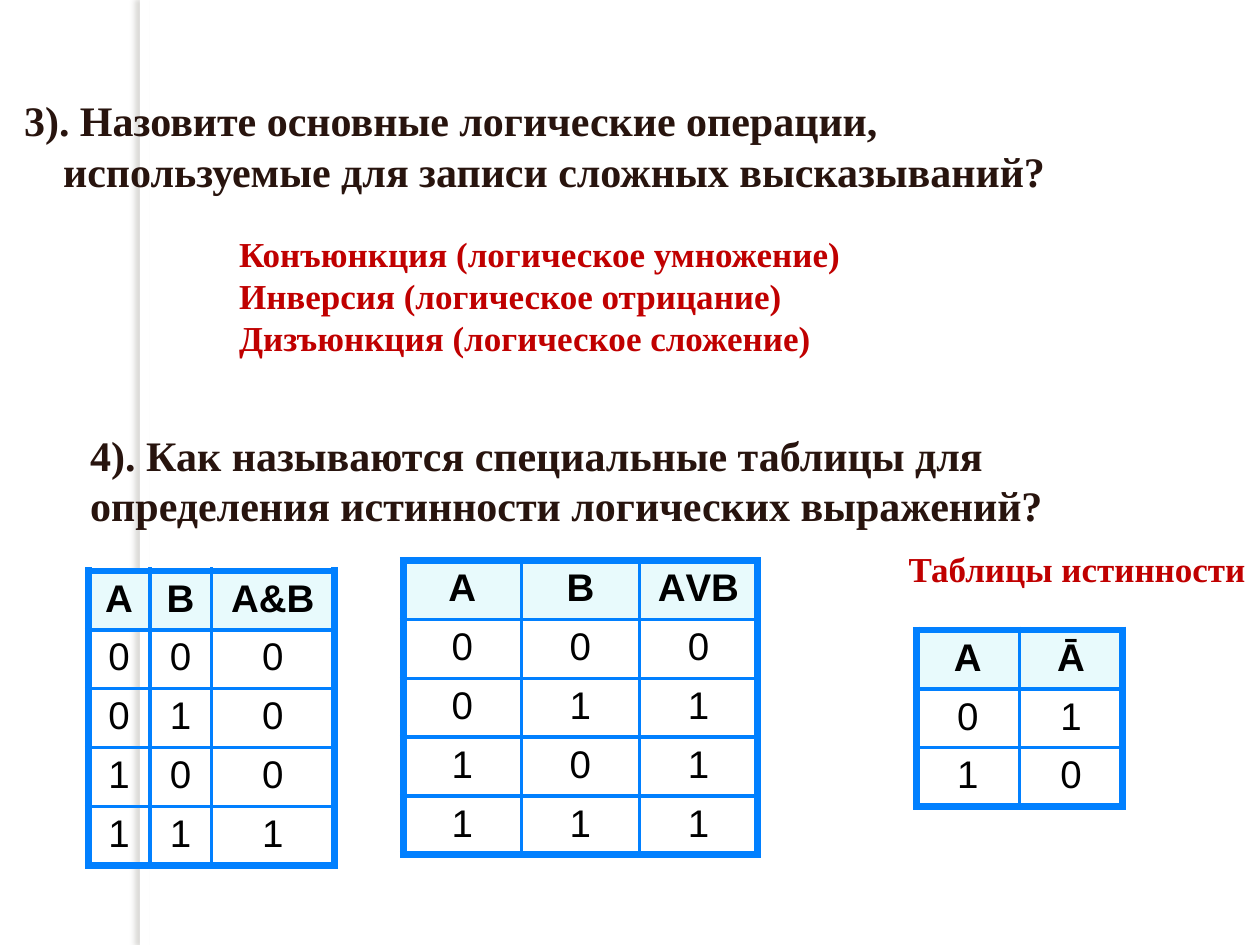
from lxml import etree
from pptx import Presentation
from pptx import util as u
from pptx.dml import color
from pptx.enum import shapes, text
from pptx.oxml import ns

COLORS = {
    "paper": "FFFFFF",
    "question": "28140E",
    "answer": "C00000",
    "grid": "0180FF",
    "header": "E8FAFC",
    "cell": "000000",
    "shadow": "736F63",
}
SERIF, SANS = "Times New Roman", "Arial"
OUTER, INNER = 4.5, 2.25
ROW_HEIGHT = 1.18


def add_xml(parent, tag, **attributes):
    return etree.SubElement(parent, ns.qn(tag), attributes)


class SlideBuilder:
    def __init__(self, slide):
        self.slide = slide

    def rgb(self, name):
        return color.RGBColor.from_string(COLORS[name])

    def format_paragraph(self, paragraph, font, size, tint, bold=True, align=text.PP_ALIGN.LEFT):
        paragraph.alignment = align
        for run in paragraph.runs:
            run.font.name = font
            run.font.size = u.Pt(size)
            run.font.bold = bold
            run.font.color.rgb = self.rgb(tint)

    def stripe(self, left, top, width, height):
        shape = self.slide.shapes.add_shape(
            shapes.MSO_SHAPE.RECTANGLE, u.Cm(left), u.Cm(top), u.Cm(width), u.Cm(height))
        shape.fill.solid()
        shape.fill.fore_color.rgb = self.rgb("paper")
        shape.line.fill.background()
        shape.shadow.inherit = False
        effects = shape.element.spPr.find(ns.qn("a:effectLst"))
        shadow = add_xml(effects, "a:outerShdw", blurRad=str(u.Pt(3)), dist=str(u.Pt(3)),
                         dir="10800000", algn="tl", rotWithShape="0")
        tint = add_xml(shadow, "a:srgbClr", val=COLORS["shadow"])
        add_xml(tint, "a:alpha", val="25000")
        shape.element.getparent().insert(2, shape.element)

    def body(self, wording, left, top, width, height):
        title = self.slide.shapes.title.element
        title.getparent().remove(title)
        shape = self.slide.placeholders[1]
        shape.left, shape.top = u.Cm(left), u.Cm(top)
        shape.width, shape.height = u.Cm(width), u.Cm(height)
        frame = shape.text_frame
        frame.text = wording
        frame.auto_size = text.MSO_AUTO_SIZE.SHAPE_TO_FIT_TEXT
        paragraph = frame.paragraphs[0]
        self.format_paragraph(paragraph, SERIF, 24, "question")
        paragraph.space_before = u.Pt(0)
        properties = paragraph._p.get_or_add_pPr()
        properties.set("marL", str(u.Cm(1.02)))
        properties.set("indent", str(u.Cm(-0.79)))
        add_xml(properties, "a:buNone")

    def text_box(self, lines, left, top, width, height, size, tint, aligns=(), wrap=False):
        shape = self.slide.shapes.add_textbox(u.Cm(left), u.Cm(top), u.Cm(width), u.Cm(height))
        frame = shape.text_frame
        frame.text = "\n".join(lines)
        frame.word_wrap = wrap
        frame.auto_size = text.MSO_AUTO_SIZE.SHAPE_TO_FIT_TEXT
        for index, paragraph in enumerate(frame.paragraphs):
            align = aligns[index] if aligns else text.PP_ALIGN.LEFT
            self.format_paragraph(paragraph, SERIF, size, tint, align=align)

    def border(self, cell, side, width):
        line = add_xml(cell._tc.get_or_add_tcPr(), f"a:ln{side}", w=str(u.Pt(width)))
        add_xml(add_xml(line, "a:solidFill"), "a:srgbClr", val=COLORS["grid"])

    def truth_table(self, rows, left, top, column_widths):
        last_row, last_column = len(rows) - 1, len(column_widths) - 1
        table = self.slide.shapes.add_table(
            len(rows), len(column_widths), u.Cm(left), u.Cm(top),
            u.Cm(sum(column_widths)), u.Cm(ROW_HEIGHT * len(rows))).table
        table.first_row = table.horz_banding = False
        for column, width in zip(table.columns, column_widths):
            column.width = u.Cm(width)
        for r, values in enumerate(rows):
            table.rows[r].height = u.Cm(ROW_HEIGHT)
            for c, value in enumerate(values):
                cell = table.cell(r, c)
                cell.text_frame.text = value
                self.format_paragraph(cell.text_frame.paragraphs[0], SANS, 22, "cell",
                                      bold=r == 0, align=text.PP_ALIGN.CENTER)
                edges = {"L": c == 0, "R": c == last_column, "T": r == 0, "B": r == last_row}
                for side, is_outer in edges.items():
                    self.border(cell, side, OUTER if is_outer else INNER)
                if r == 0:
                    cell.fill.solid()
                    cell.fill.fore_color.rgb = self.rgb("header")
                else:
                    cell.fill.background()


def main():
    presentation = Presentation()
    presentation.slide_width, presentation.slide_height = u.Cm(25.4), u.Cm(19.05)
    builder = SlideBuilder(presentation.slides.add_slide(presentation.slide_layouts[1]))
    left, center = text.PP_ALIGN.LEFT, text.PP_ALIGN.CENTER

    builder.stripe(2.82, 0, 0.2, 19.05)
    builder.body("3). Назовите основные логические операции, "
                 "используемые для записи сложных высказываний?", 0, 1.78, 22.86, 2.31)
    builder.text_box(["Конъюнкция (логическое умножение)",
                      "Инверсия (логическое отрицание)",
                      "Дизъюнкция (логическое сложение)"],
                     4.57, 4.57, 17.48, 2.82, 20, "answer", wrap=True)
    builder.text_box(["4). Как называются специальные таблицы для",
                      "определения истинности логических выражений?"],
                     1.57, 8.53, 19.91, 2.31, 24, "question", aligns=(left, center))
    builder.text_box(["Таблицы истинности"], 18.03, 10.92, 7.37, 1.12, 20, "answer",
                     aligns=(center,))

    builder.truth_table([["А", "В", "А&В"], *("000", "010", "100", "111")],
                        1.78, 11.51, [1.24, 1.24, 2.48])
    builder.truth_table([["А", "В", "АVВ"], *("000", "011", "101", "111")],
                        8.13, 11.3, [2.38] * 3)
    builder.truth_table([["А", "Ā"], *("01", "10")], 18.47, 12.7, [2.08] * 2)

    presentation.save("out.pptx")


if __name__ == "__main__":
    main()
